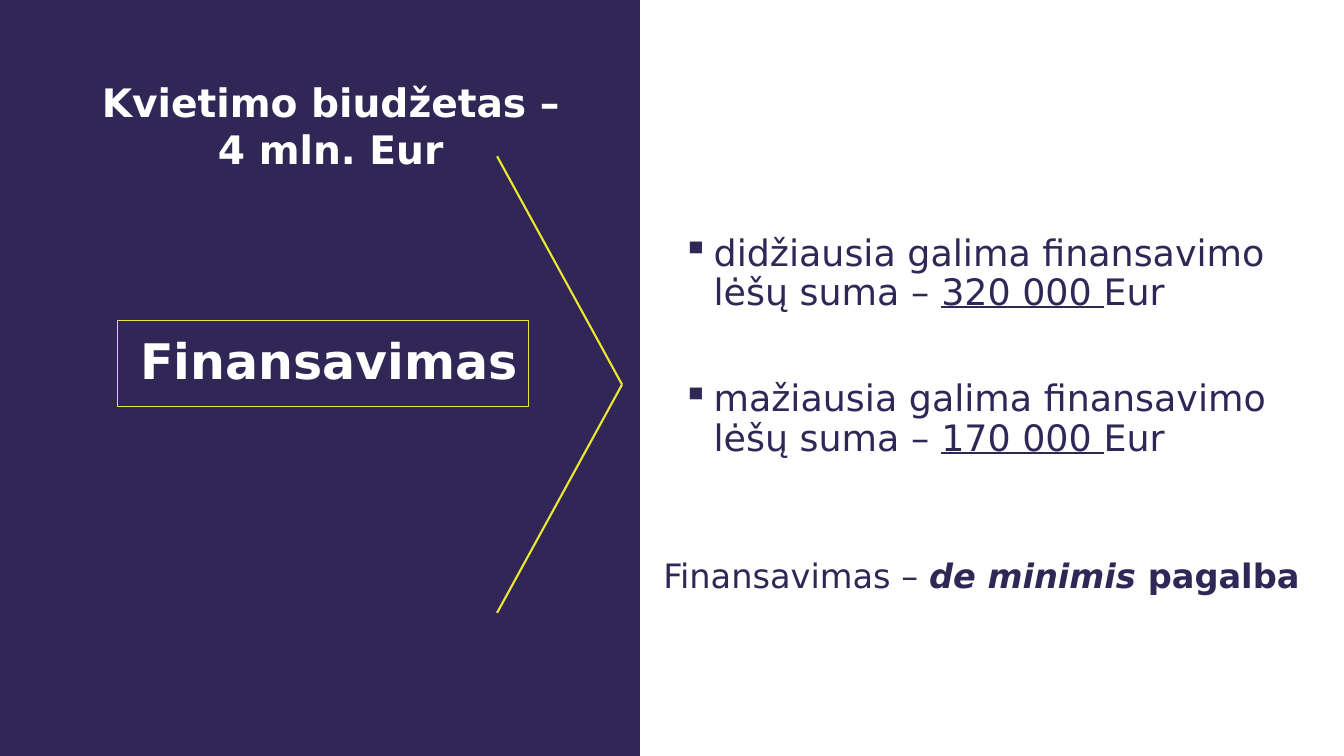
from lxml.etree import SubElement
from pptx import Presentation
from pptx.dml.color import RGBColor
from pptx.enum.shapes import MSO_CONNECTOR as Line, MSO_SHAPE as Shape
from pptx.enum.text import MSO_ANCHOR as Anchor, PP_ALIGN as Align
from pptx.oxml.ns import qn
from pptx.util import Inches, Pt

NAVY = RGBColor(0x30, 0x27, 0x57)
WHITE = RGBColor(0xFF, 0xFF, 0xFF)
YELLOW = RGBColor(0xEE, 0xE7, 0x30)
GOLD = RGBColor(0xED, 0xE6, 0x30)
FONT = "DejaVu Sans"
WIDE, HIGH = 13.33, 7.5
SPLIT = 6.35
LIMITS = [
    ("didžiausia galima finansavimo lėšų suma – ", "320 000 "),
    ("mažiausia galima finansavimo lėšų suma – ", "170 000 "),
]


def add_rect(slide, left, top, width, height):
    rect = slide.shapes.add_shape(
        Shape.RECTANGLE, Inches(left), Inches(top), Inches(width), Inches(height))
    rect.shadow.inherit = False
    return rect


def add_box(slide, left, top, width, height):
    """Add a wrapping text box and return its text frame."""
    box = slide.shapes.add_textbox(
        Inches(left), Inches(top), Inches(width), Inches(height))
    box.text_frame.word_wrap = True
    return box.text_frame


def style(para, size, color, bold=None):
    font = para.font
    font.name, font.size, font.bold = FONT, Pt(size), bold
    font.color.rgb = color


def add_run(para, text):
    run = para.add_run()
    run.text = text
    return run.font


def add_bullet(para, indent):
    props = para._p.get_or_add_pPr()
    props.set("marL", str(Inches(indent)))
    props.set("indent", str(-Inches(indent)))
    SubElement(props, qn("a:buChar")).set("char", "▪")


def add_chevron(slide, left, top, width, height):
    group = slide.shapes.add_group_shape()
    tip = (left + width, top + height / 2)
    ends = [((left, top), tip), (tip, (left, top + height))]
    for start, end in ends:
        points = [Inches(n) for n in start + end]
        line = group.shapes.add_connector(Line.STRAIGHT, *points)
        line.line.color.rgb = YELLOW
        line.line.width = Pt(1.5)
        SubElement(line._element.spPr, qn("a:effectLst"))


def add_title(slide, left, top, width, height):
    rect = add_rect(slide, left, top, width, height)
    rect.fill.background()
    rect.line.color.rgb = GOLD
    rect.line.width = Pt(0.75)
    frame = rect.text_frame
    frame.word_wrap = True
    frame.vertical_anchor = Anchor.MIDDLE
    frame.text = "Finansavimas"
    para = frame.paragraphs[0]
    para.alignment = Align.RIGHT
    para.line_spacing = 0.9
    style(para, 35, WHITE, True)


def add_budget(slide, left, top, width, height):
    frame = add_box(slide, left, top, width, height)
    frame.text = "Kvietimo biudžetas – 4 mln. Eur"
    para = frame.paragraphs[0]
    para.alignment = Align.CENTER
    style(para, 28, WHITE, True)


def add_limits(slide, left, top, width, height):
    frame = add_box(slide, left, top, width, height)
    for i, (label, amount) in enumerate(LIMITS):
        para = frame.add_paragraph() if i else frame.paragraphs[0]
        para.line_spacing = 0.9
        if i:
            para.space_before = Pt(48)
        add_bullet(para, 0.31)
        style(para, 26, NAVY)
        add_run(para, label)
        add_run(para, amount).underline = True
        add_run(para, "Eur")


def add_aid(slide, left, top, width, height):
    para = add_box(slide, left, top, width, height).paragraphs[0]
    style(para, 24, NAVY)
    add_run(para, "Finansavimas – ")
    term = add_run(para, "de minimis ")
    term.bold = term.italic = True
    add_run(para, "pagalba").bold = True


def add_panel(slide, left, top, width, height):
    panel = add_rect(slide, left, top, width, height)
    panel.fill.solid()
    panel.fill.fore_color.rgb = WHITE
    panel.line.fill.background()
    add_limits(slide, left + 0.32, top + 2.28, width - 0.71, 2.51)
    add_aid(slide, left + 0.13, top + 5.46, width - 0.36, 0.5)


def add_side(slide, left, top, width):
    add_budget(slide, left + 0.88, top + 0.73, width - 1.55, 1.04)
    add_title(slide, left + 1.17, top + 3.18, width - 2.28, 0.85)
    add_chevron(slide, left + width - 1.42, top + 1.55, 1.24, 4.53)


def main():
    deck = Presentation()
    deck.slide_width, deck.slide_height = Inches(WIDE), Inches(HIGH)
    slide = deck.slides.add_slide(deck.slide_layouts[6])
    slide.background.fill.solid()
    slide.background.fill.fore_color.rgb = NAVY
    add_panel(slide, SPLIT, 0, WIDE - SPLIT, HIGH)
    add_side(slide, 0, 0, SPLIT)
    deck.save("out.pptx")


if __name__ == "__main__":
    main()
